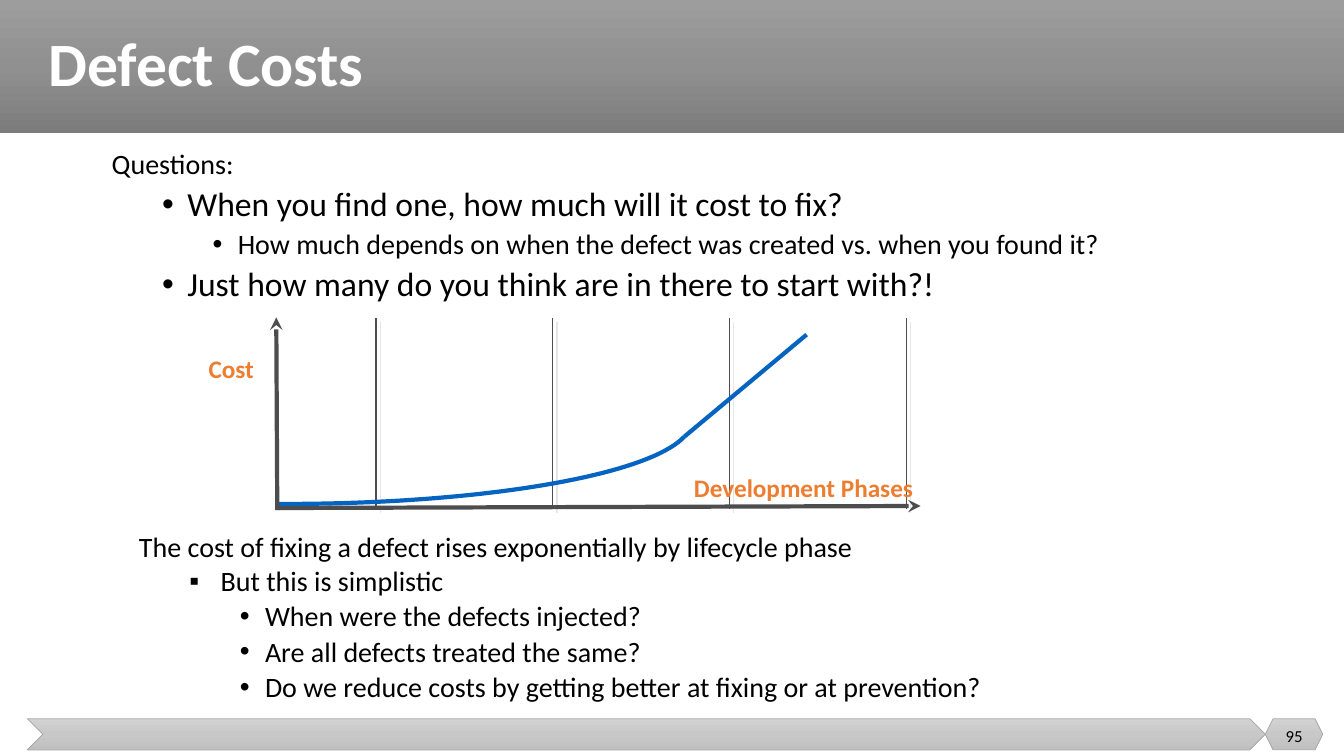
from copy import deepcopy
from pptx import Presentation
from pptx.dml.color import RGBColor
from pptx.enum.shapes import MSO_CONNECTOR, MSO_SHAPE
from pptx.enum.text import MSO_ANCHOR, PP_ALIGN
from pptx.oxml.ns import qn
from pptx.util import Inches, Pt
from lxml import etree

LINE = MSO_CONNECTOR.STRAIGHT
RECT, CHEVRON, HEXAGON = MSO_SHAPE.RECTANGLE, MSO_SHAPE.CHEVRON, MSO_SHAPE.HEXAGON
TOP, MIDDLE = MSO_ANCHOR.TOP, MSO_ANCHOR.MIDDLE
LEFT, CENTER = PP_ALIGN.LEFT, PP_ALIGN.CENTER

FONT = "Calibri"
WHITE = RGBColor(0xFF, 0xFF, 0xFF)
BLACK = RGBColor(0, 0, 0)
ORANGE = RGBColor(0xED, 0x7D, 0x31)
BLUE = RGBColor(0x05, 0x63, 0xC1)
DARK = RGBColor(0x4D, 0x4D, 0x4D)
EDGE = RGBColor(0xA5, 0xA5, 0xA5)
SHADE = RGBColor(0xE7, 0xE6, 0xE6)
BANNER = [RGBColor(v, v, v) for v in (0x9D, 0x90, 0x7C)]
FOOTER = [RGBColor(v, v, v) for v in (0xD2, 0xC8, 0xC0)]

BARS = [
    (RECT, (0, 0, 13.33, 1.32), BANNER, None),
    (CHEVRON, (0.27, 7.13, 12.28, 0.31), FOOTER, EDGE),
    (HEXAGON, (12.55, 7.13, 0.57, 0.31), FOOTER, EDGE),
]

# text, size, left margin, hanging indent, bullet, line spacing, space before
QUESTIONS = [
    ("Questions:", 20, 0.25, 0.25, None, 0.9, 10),
    ("When you find one, how much will it cost to fix?", 24, 0.75, 0.25, "•", 0.9, 5),
    ("How much depends on when the defect was created vs. when you found it?",
     20, 1.25, 0.25, "•", 0.9, 5),
    ("Just how many do you think are in there to start with?!", 24, 0.75, 0.25, "•", 0.9, 5),
]
LESSONS = [
    ("The cost of fixing a defect rises exponentially by lifecycle phase",
     20, 0.38, 0.38, None, 1, 3.5),
    ("But this is simplistic", 20, 0.81, 0.31, "▪", 0.9, 3.5),
    ("When were the defects injected?", 20, 1.25, 0.25, "•", 0.9, 3.5),
    ("Are all defects treated the same?", 20, 1.25, 0.25, "•", 0.9, 3.5),
    ("Do we reduce costs by getting better at fixing or at prevention?",
     20, 1.25, 0.25, "•", 0.9, 3.5),
]
LABELS = [
    ("Defect Costs", (0.38, 0, 12.74, 1.32), 44, WHITE, True, LEFT, MIDDLE, 0.9),
    ("Cost", (1.97, 3.5, 0.8, 0.35), 18, ORANGE, True, LEFT, TOP, 0.9),
    ("Development Phases", (6.32, 4.68, 3.3, 0.35), 18, ORANGE, True, CENTER, TOP, 0.9),
    ("95", (12.55, 7.1, 0.57, 0.4), 12, BLACK, False, CENTER, MIDDLE, 1),
]

PHASES, PHASE_X, PHASE_GAP = 4, 3.73, 1.753
PHASE_TOP, PHASE_END = 3.15, 5.05
AXES = [((2.75, 5.06), (2.74, 3.15)), ((2.76, 5.04), (9.13, 5.02))]
START = (2.75, 5)
BEND = [(2.83, 5), (4.77, 5), (6.43, 4.72), (6.79, 4.33)]
RISE = (8, 3.32)
STEPS = 40

prs = Presentation()
prs.slide_width, prs.slide_height = Inches(13.33), Inches(7.5)
slide = prs.slides.add_slide(prs.slide_layouts[6])
shapes = slide.shapes


def add_bar(kind, box, colors, edge):
    bar = shapes.add_shape(kind, *map(Inches, box))
    bar.shadow.inherit = False
    bar.fill.gradient()
    bar.fill.gradient_angle = 270
    stops = bar.element.spPr.find(".//" + qn("a:gsLst"))
    stops.insert(1, deepcopy(stops[0]))
    for i, (stop, color) in enumerate(zip(bar.fill.gradient_stops, colors)):
        stop.position = i / 2
        stop.color.rgb = color
    if edge is None:
        bar.line.fill.background()
    else:
        bar.line.color.rgb = edge
        bar.line.width = Pt(0.5)


def add_box(box, anchor=TOP):
    frame = shapes.add_textbox(*map(Inches, box)).text_frame
    frame.word_wrap = True
    frame.vertical_anchor = anchor
    return frame


def add_run(para, text, size, color, bold=False):
    run = para.add_run()
    run.text = text
    run.font.name, run.font.size, run.font.bold = FONT, Pt(size), bold
    run.font.color.rgb = color


def add_label(text, box, size, color, bold, align, anchor, space):
    frame = add_box(box, anchor)
    frame.margin_top = frame.margin_bottom = Inches(0.04)
    para = frame.paragraphs[0]
    para.alignment, para.line_spacing = align, space
    add_run(para, text, size, color, bold)


def add_list(box, rows):
    frame = add_box(box)
    for i, (text, size, margin, hang, mark, space, before) in enumerate(rows):
        para = frame.add_paragraph() if i else frame.paragraphs[0]
        para.line_spacing, para.space_before = space, Pt(before)
        props = para._p.get_or_add_pPr()
        props.set("marL", str(Inches(margin)))
        props.set("indent", str(-Inches(hang)))
        if mark:
            etree.SubElement(props, qn("a:buFont")).set("typeface", "Arial")
            etree.SubElement(props, qn("a:buChar")).set("char", mark)
        add_run(para, text, size, BLACK)


def add_line(start, end, color, width, arrow=False, shade=False):
    line = shapes.add_connector(LINE, *map(Inches, start + end))
    line.line.color.rgb = color
    line.line.width = Pt(width)
    props = line.element.spPr
    if arrow:
        etree.SubElement(props.find(qn("a:ln")), qn("a:tailEnd")).set("type", "stealth")
    effects = etree.SubElement(props, qn("a:effectLst"))
    if shade:
        cast = etree.SubElement(effects, qn("a:outerShdw"),
                                dist=str(Pt(4.2)), dir="2700000", algn="ctr")
        etree.SubElement(cast, qn("a:srgbClr")).set("val", str(SHADE))


def bend_point(t):
    parts = ((1 - t) ** 3, 3 * t * (1 - t) ** 2, 3 * t * t * (1 - t), t ** 3)
    return tuple(Inches(sum(p * spot[k] for p, spot in zip(parts, BEND))) for k in (0, 1))


def add_curve():
    build = shapes.build_freeform(*map(Inches, START))
    build.add_line_segments([bend_point(i / STEPS) for i in range(STEPS + 1)], close=False)
    curve = build.convert_to_shape()
    curve.shadow.inherit = False
    curve.fill.background()
    curve.line.color.rgb = BLUE
    curve.line.width = Pt(3)


for bar in BARS:
    add_bar(*bar)
add_list((1.01, 1.44, 10.55, 1.82), QUESTIONS)
for i in range(PHASES):
    x = PHASE_X + i * PHASE_GAP
    add_line((x, PHASE_END), (x, PHASE_TOP), DARK, 1, shade=True)
add_line(BEND[-1], RISE, BLUE, 3)
add_curve()
for start, end in AXES:
    add_line(start, end, DARK, 3, arrow=True)
for label in LABELS:
    add_label(*label)
add_list((1.28, 5.2, 9.58, 2.08), LESSONS)

prs.save("out.pptx")
